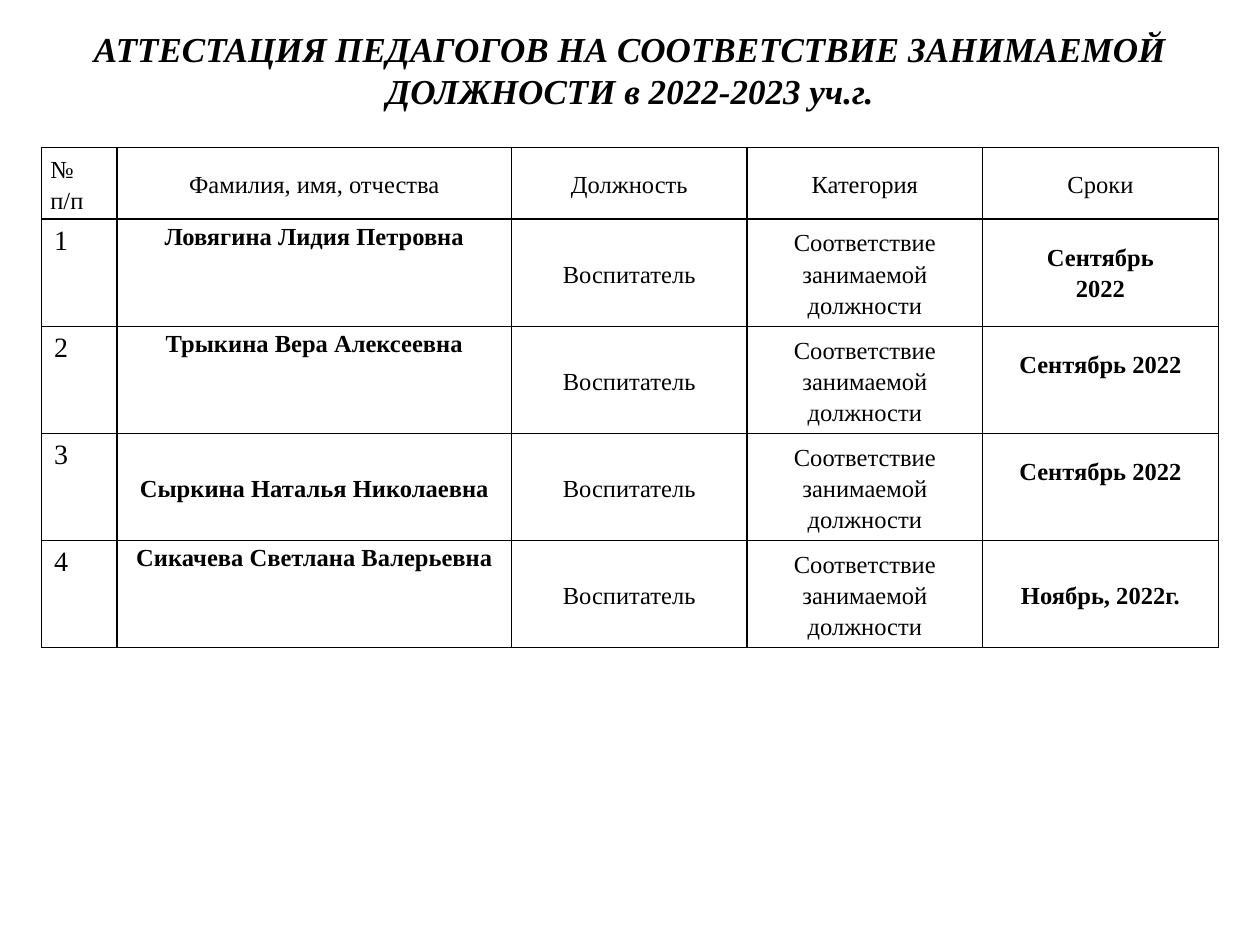
from dataclasses import dataclass

from lxml import etree
from pptx import Presentation
from pptx.dml.color import RGBColor
from pptx.enum.text import MSO_ANCHOR, MSO_AUTO_SIZE, PP_ALIGN
from pptx.oxml.ns import qn
from pptx.util import Inches, Pt

TOP, MIDDLE = MSO_ANCHOR.TOP, MSO_ANCHOR.MIDDLE
LEFT, CENTER = PP_ALIGN.LEFT, PP_ALIGN.CENTER


@dataclass(frozen=True)
class Theme:
    font: str = "Times New Roman"
    ink: str = "000000"
    title: int = 20
    number: int = 16
    body: int = 14
    border: int = 1


theme = Theme()


def add_run(paragraph, text, size, bold=False, italic=False):
    run = paragraph.add_run()
    run.text = text
    font = run.font
    font.name, font.size = theme.font, Pt(size)
    font.bold, font.italic = bold, italic
    font.color.rgb = RGBColor.from_string(theme.ink)


def fill_cell(cell, lines, size=theme.body, bold=False, anchor=MIDDLE,
              align=CENTER, spacing=1.15, side=0.07, top=0, bottom=0):
    cell.fill.background()
    cell.vertical_anchor = anchor
    cell.margin_left = cell.margin_right = Inches(side)
    cell.margin_top, cell.margin_bottom = Inches(top), Inches(bottom)
    frame = cell.text_frame
    for index, line in enumerate(lines):
        paragraph = frame.add_paragraph() if index else frame.paragraphs[0]
        paragraph.alignment = align
        paragraph.line_spacing = spacing
        add_run(paragraph, line, size, bold)
    # Cell borders come before the fill in the cell properties
    properties = cell._tc.get_or_add_tcPr()
    for index, edge in enumerate(("a:lnL", "a:lnR", "a:lnT", "a:lnB")):
        border = etree.Element(qn(edge), w=str(Pt(theme.border)))
        solid = etree.SubElement(border, qn("a:solidFill"))
        etree.SubElement(solid, qn("a:srgbClr"), val=theme.ink)
        properties.insert(index, border)


prs = Presentation()
prs.slide_width, prs.slide_height = Inches(10), Inches(7.5)
slide = prs.slides.add_slide(prs.slide_layouts[5])

# Title, raised within its box by the bottom margin
title = slide.shapes.title
title.left, title.top = Inches(0.5), Inches(0.3)
title.width, title.height = Inches(9), Inches(0.78)
heading = title.text_frame
heading.word_wrap = True
heading.auto_size = MSO_AUTO_SIZE.NONE
heading.vertical_anchor = MIDDLE
heading.margin_top, heading.margin_bottom = Inches(0.05), Inches(0.33)
heading.paragraphs[0].alignment = CENTER
add_run(heading.paragraphs[0],
        "АТТЕСТАЦИЯ ПЕДАГОГОВ НА СООТВЕТСТВИЕ ЗАНИМАЕМОЙ ДОЛЖНОСТИ в 2022-2023 уч.г.",
        theme.title, bold=True, italic=True)

# Table contents: name and its anchor, date lines, their anchor and top margin
headers = ["№ п/п", "Фамилия, имя, отчества", "Должность", "Категория", "Сроки"]
teachers = [
    ("Ловягина Лидия Петровна", TOP, ["Сентябрь", "2022"], TOP, 0.17),
    ("Трыкина Вера Алексеевна", TOP, ["Сентябрь 2022"], TOP, 0.17),
    ("Сыркина Наталья Николаевна", MIDDLE, ["Сентябрь 2022"], TOP, 0.17),
    ("Сикачева Светлана Валерьевна", TOP, ["Ноябрь, 2022г."], MIDDLE, 0),
]
column_widths = [0.6, 3.13, 1.87, 1.87, 1.87]
row_heights = [0.57] + [0.85] * len(teachers)

# Table grid
schedule = slide.shapes.add_table(
    len(row_heights), len(column_widths), Inches(0.33), Inches(1.17),
    Inches(sum(column_widths)), Inches(sum(row_heights))).table
schedule.first_row = schedule.horz_banding = False
for column, width in zip(schedule.columns, column_widths):
    column.width = Inches(width)
for row, height in zip(schedule.rows, row_heights):
    row.height = Inches(height)

# Header row
for index, header in enumerate(headers):
    fill_cell(schedule.cell(0, index), [header], align=CENTER if index else LEFT)

# Teacher rows
for number, (name, name_anchor, dates, date_anchor, date_top) in enumerate(teachers, 1):
    number_cell, name_cell, post_cell, category_cell, date_cell = schedule.rows[number].cells
    fill_cell(number_cell, [str(number)], theme.number, anchor=TOP, align=LEFT,
              spacing=1.0, side=0.1, top=0.05, bottom=0.05)
    fill_cell(name_cell, [name], bold=True, anchor=name_anchor)
    fill_cell(post_cell, ["Воспитатель"])
    fill_cell(category_cell, ["Соответствие занимаемой должности"])
    fill_cell(date_cell, dates, bold=True, anchor=date_anchor, top=date_top)

prs.save("out.pptx")
